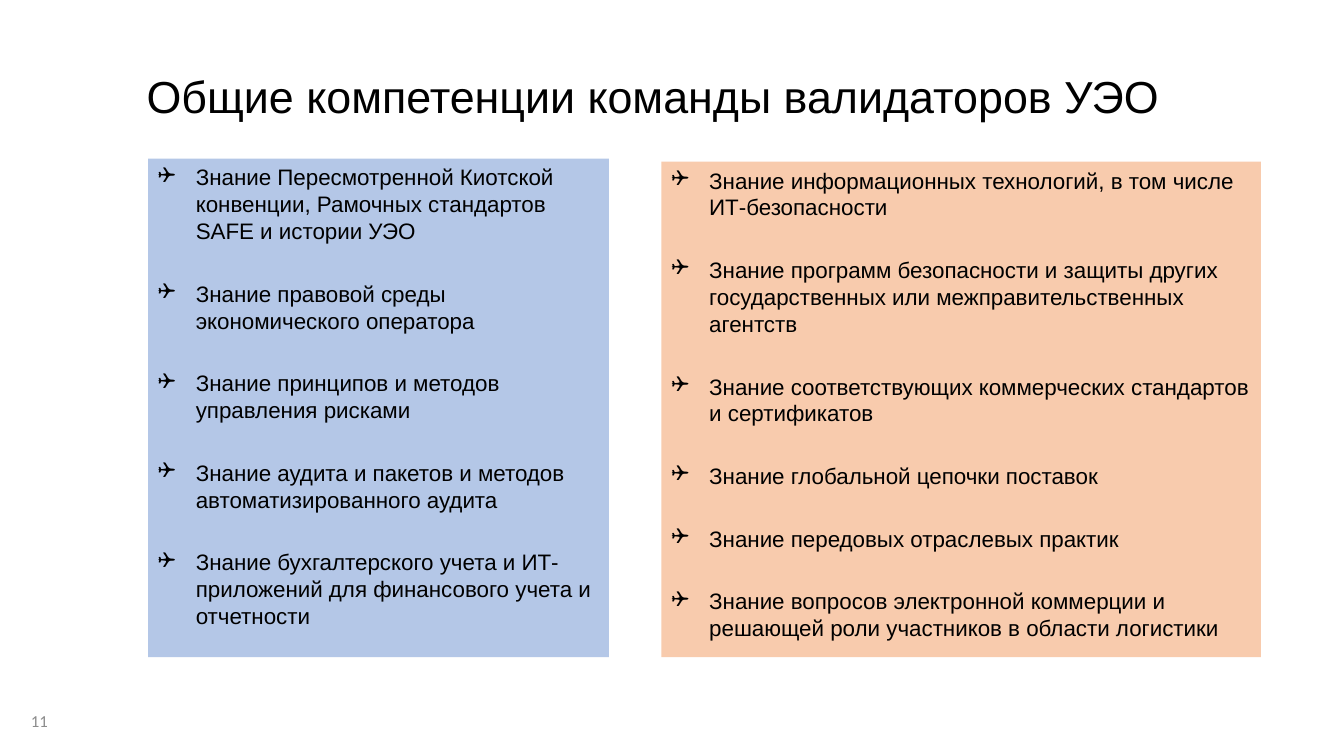
from pptx import Presentation
from pptx.util import Pt
from pptx.dml.color import RGBColor
from pptx.enum.shapes import MSO_SHAPE
from pptx.enum.text import PP_ALIGN, MSO_ANCHOR
from lxml import etree

PX = 9525
RECT = MSO_SHAPE.RECTANGLE
LEFT, RIGHT = PP_ALIGN.LEFT, PP_ALIGN.RIGHT
TOP, MIDDLE = MSO_ANCHOR.TOP, MSO_ANCHOR.MIDDLE
NS = "http://schemas.openxmlformats.org/drawingml/2006/main"
COLORS = {"text": "000000", "number": "8C8C8C", "blue": "B4C7E7", "peach": "F8CBAD"}
INDENT = 36


def style(par, size, color="text", face="Arial"):
    for run in par.runs:
        run.font.size = Pt(size)
        run.font.name = face
        run.font.color.rgb = RGBColor.from_string(COLORS[color])


def bullet(par):
    props = par._p.get_or_add_pPr()
    props.set("marL", str(INDENT * PX))
    props.set("indent", str(-INDENT * PX))
    etree.SubElement(props, f"{{{NS}}}buFont").set("typeface", "Wingdings")
    etree.SubElement(props, f"{{{NS}}}buChar").set("char", "❑")


prs = Presentation()
prs.slide_width, prs.slide_height = 1280 * PX, 720 * PX
slide = prs.slides.add_slide(prs.slide_layouts[5])

# Title
title = slide.shapes.title
title.left, title.top, title.width, title.height = [n * PX for n in (130, 38, 1090, 112)]
frame = title.text_frame
frame.text = "Общие компетенции команды валидаторов УЭО"
frame.vertical_anchor = MIDDLE
head = frame.paragraphs[0]
head.alignment = LEFT
head.line_spacing = 0.9
style(head, 32)

# Skill panels
panels = [
    ("blue", (141, 151, 439, 475), [
        "Знание Пересмотренной Киотской конвенции, Рамочных стандартов SAFE и истории УЭО",
        "Знание правовой среды экономического оператора",
        "Знание принципов и методов управления рисками",
        "Знание аудита и пакетов и методов автоматизированного аудита",
        "Знание бухгалтерского учета и ИТ-приложений для финансового учета и отчетности",
    ]),
    ("peach", (630, 154, 571, 472), [
        "Знание информационных технологий, в том числе ИТ-безопасности",
        "Знание программ безопасности и защиты других государственных или "
        "межправительственных агентств",
        "Знание соответствующих коммерческих стандартов и сертификатов",
        "Знание глобальной цепочки поставок",
        "Знание передовых отраслевых практик",
        "Знание вопросов электронной коммерции и решающей роли участников "
        "в области логистики",
    ]),
]
for color, area, skills in panels:
    panel = slide.shapes.add_shape(RECT, *[n * PX for n in area])
    panel.shadow.inherit = False
    panel.fill.solid()
    panel.fill.fore_color.rgb = RGBColor.from_string(COLORS[color])
    panel.line.fill.background()
    frame = panel.text_frame
    frame.word_wrap = True
    frame.vertical_anchor = TOP
    frame.text = "\n".join(skills)
    for i, par in enumerate(frame.paragraphs):
        par.alignment = LEFT
        if i:
            par.space_before = Pt(25.6)
        bullet(par)
        style(par, 16)

# Slide number
box = slide.shapes.add_textbox(*[n * PX for n in (0, 667, 55, 38)])
frame = box.text_frame
frame.word_wrap = True
frame.vertical_anchor = MIDDLE
frame.text = "11"
frame.paragraphs[0].alignment = RIGHT
style(frame.paragraphs[0], 12, "number", "Calibri")

prs.save("out.pptx")
